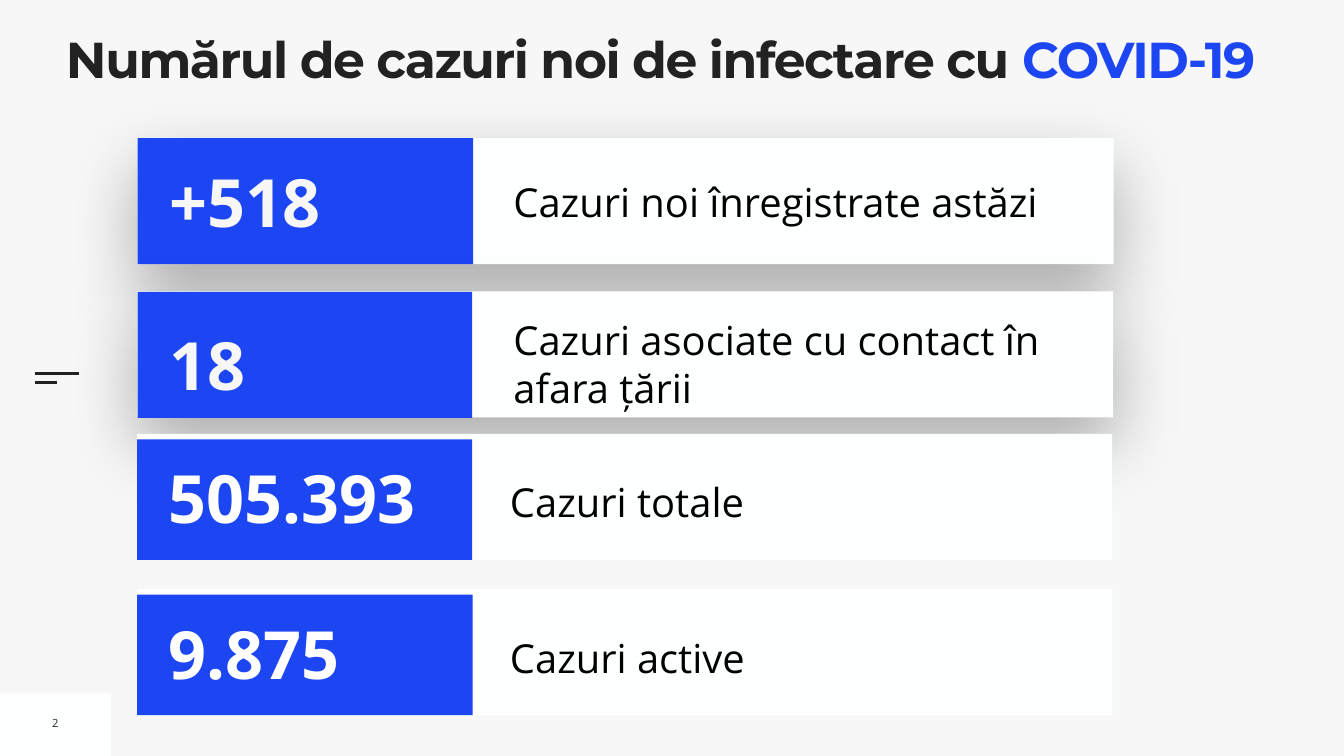
from dataclasses import dataclass

from lxml import etree
from pptx import Presentation
from pptx.dml.color import RGBColor
from pptx.enum.shapes import MSO_CONNECTOR, MSO_SHAPE
from pptx.enum.text import MSO_ANCHOR, PP_ALIGN
from pptx.oxml.ns import qn
from pptx.util import Inches, Pt

RECT = MSO_SHAPE.RECTANGLE
STRAIGHT = MSO_CONNECTOR.STRAIGHT
TOP, MIDDLE = MSO_ANCHOR.TOP, MSO_ANCHOR.MIDDLE
LEFT, CENTER = PP_ALIGN.LEFT, PP_ALIGN.CENTER

BLUE, WHITE, PALE, DARK, BLACK = "1D46F3", "FEFFFF", "F7F7F7", "222222", "000000"
BODY_FONT, TITLE_FONT = "Open Sans", "Montserrat"

Box = tuple[float, float, float, float]


@dataclass
class Run:
    text: str
    size: float
    color: str
    bold: bool = False
    font: str = BODY_FONT
    spacing: float = 0


@dataclass
class StatRow:
    value: str
    label: str
    card: Box
    panel: Box
    value_at: Box
    label_at: Box
    value_color: str = "FFFFFF"
    raised: bool = False


def rgb(color: str) -> RGBColor:
    return RGBColor.from_string(color)


def add_shadow(sp) -> None:
    """Add a soft shadow that falls straight down."""
    effects = sp._element.spPr.find(qn("a:effectLst"))
    shadow = etree.SubElement(effects, qn("a:outerShdw"), blurRad=str(Pt(100)),
                              dist=str(Pt(40)), dir="5400000", rotWithShape="0")
    color = etree.SubElement(shadow, qn("a:srgbClr"), val=BLACK)
    etree.SubElement(color, qn("a:alpha"), val="30000")


def add_rect(shapes, box: Box, color: str, raised: bool = False) -> None:
    sp = shapes.add_shape(RECT, *map(Inches, box))
    sp.shadow.inherit = False
    sp.fill.solid()
    sp.fill.fore_color.rgb = rgb(color)
    sp.line.fill.background()
    if raised:
        add_shadow(sp)


def add_rule(shapes, x1: float, x2: float, y: float) -> None:
    line = shapes.add_connector(STRAIGHT, *map(Inches, (x1, y, x2, y)))
    line.line.color.rgb = rgb(DARK)
    line.line.width = Pt(3)
    etree.SubElement(line._element.spPr, qn("a:effectLst"))


def add_text(shapes, box: Box, runs: list[Run], inset: float = 0.1, anchor=MIDDLE,
             align=LEFT, wrap: bool = True, **spacing) -> None:
    tf = shapes.add_textbox(*map(Inches, box)).text_frame
    frame_format = {"word_wrap": wrap, "vertical_anchor": anchor}
    for side in ("left", "top", "right", "bottom"):
        frame_format[f"margin_{side}"] = Inches(inset)
    for name, value in frame_format.items():
        setattr(tf, name, value)
    p = tf.paragraphs[0]
    for name, value in {"alignment": align, **spacing}.items():
        setattr(p, name, value)
    for run in runs:
        r = p.add_run()
        r.text = run.text
        font_format = {"name": run.font, "size": Pt(run.size), "bold": run.bold}
        for name, value in font_format.items():
            setattr(r.font, name, value)
        r.font.color.rgb = rgb(run.color)
        if run.spacing:
            r.font._element.set("spc", str(round(run.spacing * 100)))


def add_stat_row(shapes, row: StatRow) -> None:
    label_format = {} if row.raised else {
        "inset": 0, "line_spacing": 1.3, "space_before": Pt(20)}
    add_rect(shapes, row.card, WHITE, row.raised)
    add_text(shapes, row.label_at, [Run(row.label, 57, BLACK)], **label_format)
    add_rect(shapes, row.panel, BLUE)
    add_text(shapes, row.value_at, [Run(row.value, 95, row.value_color, bold=True)])


# The raised rows cast shadows, so the order here is back to front.
ROWS = [
    StatRow("9.875", "Cazuri active", (2.72, 11.69, 19.35, 2.5), (2.72, 11.8, 6.66, 2.39),
            (3.25, 12.05, 6.03, 1.8), (10.12, 12.27, 11.58, 1.25)),
    StatRow("+518", "Cazuri noi înregistrate astăzi", (2.73, 2.74, 19.37, 2.5),
            (2.73, 2.74, 6.66, 2.5), (3.26, 3.09, 6.03, 1.8), (10.09, 3.41, 11.76, 1.16),
            PALE, raised=True),
    StatRow("18", "Cazuri asociate cu contact în afara țării", (2.72, 5.78, 19.37, 2.5),
            (2.73, 5.79, 6.64, 2.5), (3.26, 6.32, 6.03, 1.8), (10.09, 6.16, 11.76, 2.12),
            PALE, raised=True),
    StatRow("505.393", "Cazuri totale", (2.72, 8.61, 19.35, 2.5), (2.72, 8.72, 6.65, 2.39),
            (3.25, 8.96, 6.03, 1.8), (10.12, 9.25, 11.58, 1.12)),
]


def main() -> None:
    prs = Presentation()
    prs.slide_width, prs.slide_height = Inches(26.67), Inches(15)
    s = prs.slides.add_slide(prs.slide_layouts[6])
    s.background.fill.solid()
    s.background.fill.fore_color.rgb = rgb(PALE)

    add_rect(s.shapes, (0, 13.76, 2.2, 1.24), WHITE)
    add_rule(s.shapes, 0.69, 1.57, 7.41)
    add_rule(s.shapes, 0.69, 1.13, 7.59)
    add_text(s.shapes, (0.93, 14.09, 0.34, 0.51), [Run("2", 16, DARK)],
             align=CENTER, wrap=False)

    title = [Run(text, 72, color, True, TITLE_FONT, -2) for text, color in (
        ("Numărul de cazuri noi de infectare cu ", DARK), ("COVID-19", BLUE))]
    add_text(s.shapes, (1.31, 0.78, 23.94, 1.58), title, inset=0, anchor=TOP,
             line_spacing=0.8)

    for row in ROWS:
        add_stat_row(s.shapes, row)
    prs.save("out.pptx")


if __name__ == "__main__":
    main()
